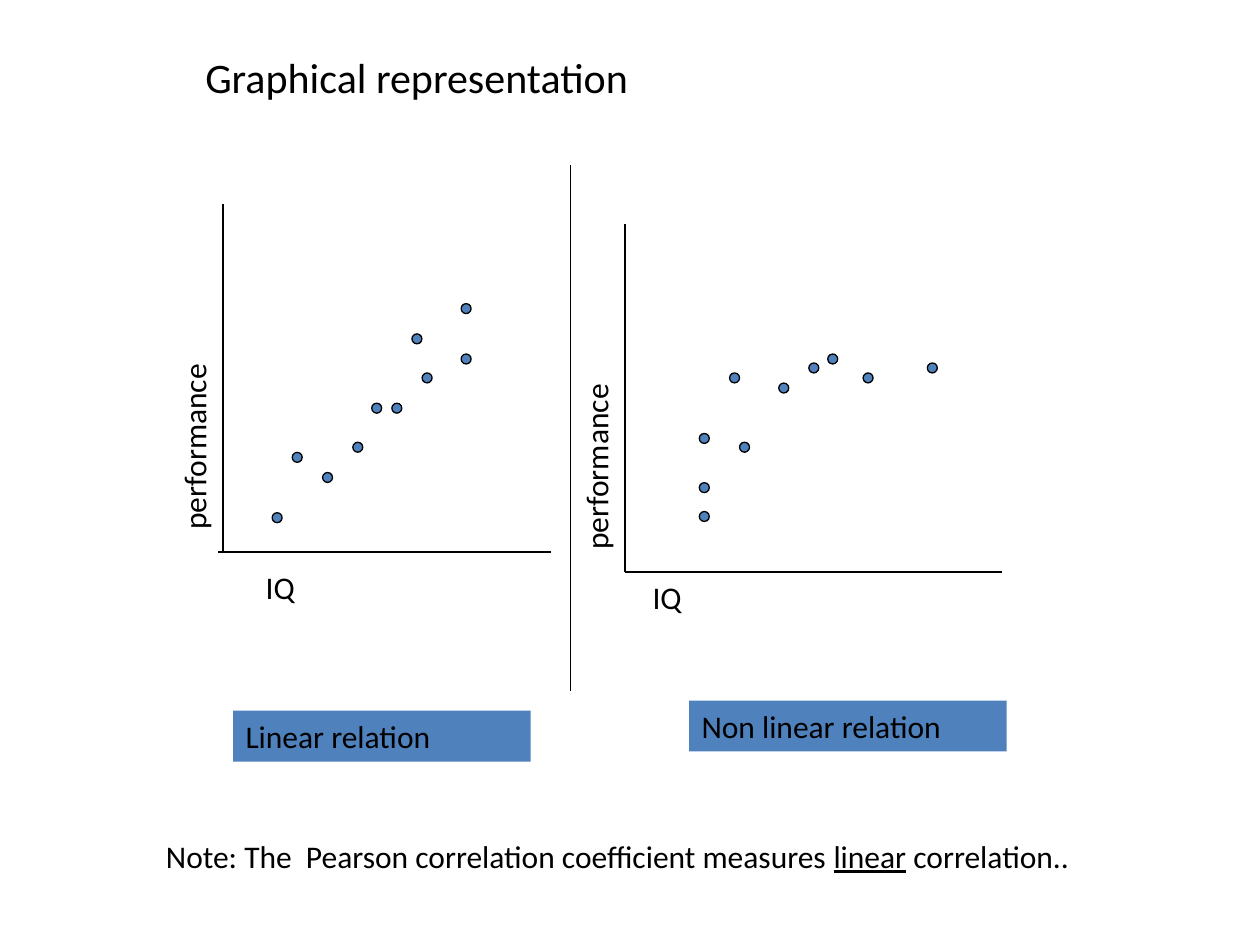
from pptx import Presentation
from pptx.dml.color import RGBColor
from pptx.enum.shapes import MSO_CONNECTOR as Link, MSO_SHAPE as Form
from pptx.enum.text import MSO_ANCHOR as Anchor, MSO_AUTO_SIZE as Fit, PP_ALIGN as Align
from pptx.oxml.ns import qn
from pptx.util import Pt
from lxml.etree import SubElement

PLOTS = [
    {
        "up": (127.4, 116.6, 127.4, 315.4),
        "base": (124.6, 315.4, 314.6, 315.4),
        "dots": [(155.5, 293), (167, 258.5), (184.3, 270), (201.6, 252.7), (212.4, 230.4),
                 (223.9, 230.4), (235.4, 190.8), (241.2, 213.1), (263.5, 173.5), (263.5, 202.3)],
        "side": (14.4, 198.7, 193, 29.1),
        "foot": (144.7, 321.1, 181.4, 29.1),
        "tag": ("Linear relation", (133.2, 406.1, 170, 29.1)),
    },
    {
        "up": (357.1, 128.2, 357.1, 326.9),
        "base": (357.1, 326.9, 572.4, 326.9),
        "dots": [(399.6, 247.7), (399.6, 275.8), (399.6, 292.3), (416.9, 213.1), (422.6, 252.7),
                 (445, 218.9), (462.2, 207.4), (473, 202.3), (493.2, 213.1), (529.9, 207.4)],
        "side": (244.1, 210.2, 193, 29.1),
        "foot": (365.8, 326.9, 181.4, 29.1),
        "tag": ("Non linear relation", (393.8, 400.3, 181.4, 29.1)),
    },
]


def tint(code):
    return RGBColor.from_string(code)


def points(nums):
    return [Pt(n) for n in nums]


class Board:
    """Holds the style and the slide being drawn."""

    ink, blue, face, dot_size = "000000", "4F81BD", "Calibri", 5.7

    def __init__(self, slide):
        self.shapes = slide.shapes

    def pen(self, line):
        line.color.rgb = tint(self.ink)
        line.width = Pt(0.75)

    def line(self, ends):
        link = self.shapes.add_connector(Link.STRAIGHT, *points(ends))
        self.pen(link.line)
        SubElement(link._element.spPr, qn("a:effectLst"))

    def solid(self, form, box):
        shape = self.shapes.add_shape(form, *points(box))
        shape.shadow.inherit = False
        shape.fill.solid()
        shape.fill.fore_color.rgb = tint(self.blue)
        return shape

    def dot(self, left, top):
        shape = self.solid(Form.OVAL, (left, top, self.dot_size, self.dot_size))
        self.pen(shape.line)

    def label(self, shape, parts, size=18):
        frame = shape.text_frame
        look = {"word_wrap": True, "auto_size": Fit.SHAPE_TO_FIT_TEXT, "vertical_anchor": Anchor.TOP}
        for name, value in look.items():
            setattr(frame, name, value)
        para = frame.paragraphs[0]
        para.alignment = Align.LEFT
        for words, under in parts:
            run = para.add_run()
            run.text = words
            run.font.color.rgb = tint(self.ink)
            style = {"name": self.face, "size": Pt(size), "underline": under}
            for name, value in style.items():
                setattr(run.font, name, value)

    def text(self, box, *parts, size=18, turn=0):
        shape = self.shapes.add_textbox(*points(box))
        shape.rotation = turn
        self.label(shape, parts, size)

    def tag(self, words, box):
        shape = self.solid(Form.RECTANGLE, box)
        shape.line.fill.background()
        self.label(shape, [(words, False)])

    def plot(self, up, base, dots, side, foot, tag):
        self.line(up)
        self.line(base)
        for spot in dots:
            self.dot(*spot)
        self.text(side, ("performance", False), turn=270)
        self.text(foot, ("IQ", False))
        self.tag(*tag)


def main():
    deck = Presentation()
    deck.slide_width, deck.slide_height = Pt(720), Pt(540)
    board = Board(deck.slides.add_slide(deck.slide_layouts[6]))
    for plot in PLOTS:
        board.plot(**plot)
    board.line((326.2, 94.3, 326.2, 394.6))
    board.text(
        (87.8, 474.5, 595.4, 29.1),
        ("Note: The  Pearson correlation coefficient measures ", False),
        ("linear", True),
        (" correlation..", False),
    )
    board.text((110.2, 25.9, 567.4, 94.3), ("Graphical representation", False), size=24)
    deck.save("out.pptx")


if __name__ == "__main__":
    main()
